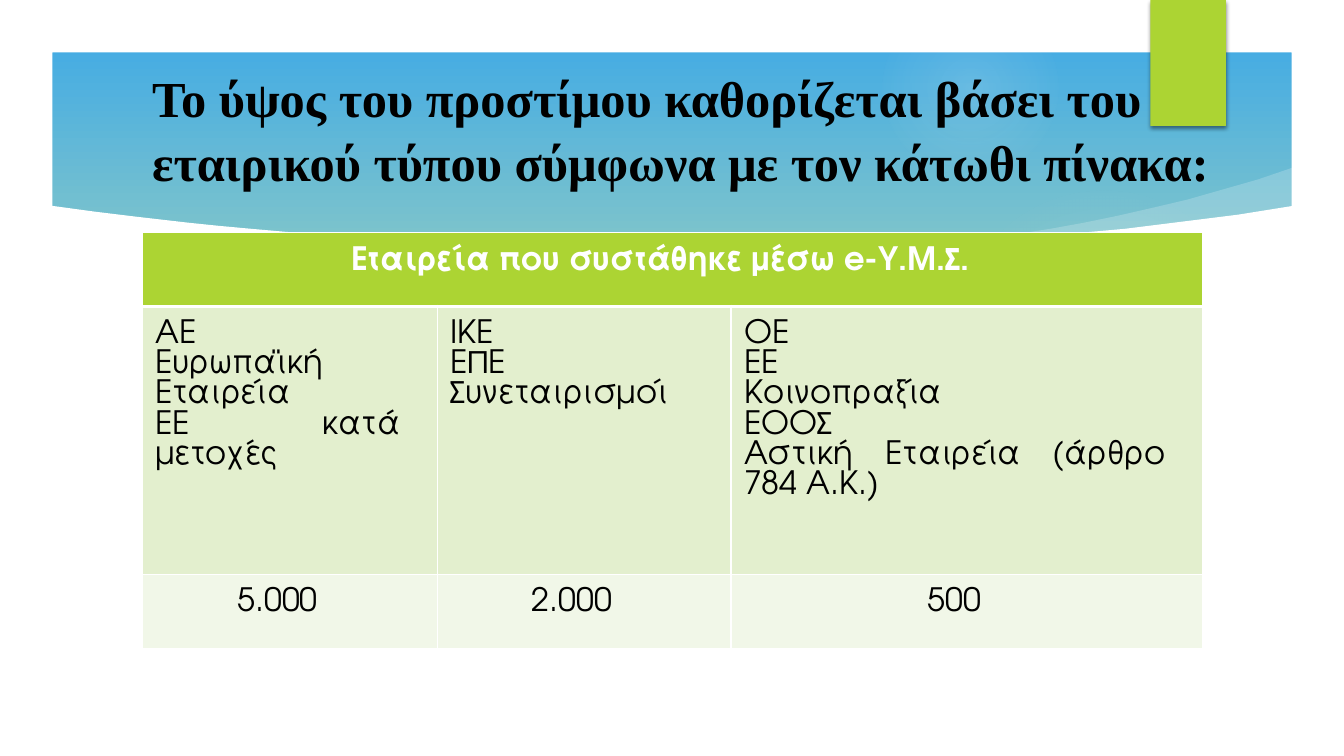
import pptx
import pptx.dml.color
import pptx.enum.shapes
import pptx.enum.text
import pptx.oxml
import pptx.oxml.ns
import pptx.util
from pptx.util import Inches

SLIDE_SIZE = (13.33, 7.5)
TITLE = "Το ύψος του προστίμου καθορίζεται βάσει του εταιρικού τύπου σύμφωνα με τον κάτωθι πίνακα:"
HEADER = "Εταιρεία που συστάθηκε μέσω e-Υ.Μ.Σ."
FINES = [
    (["ΑΕ", "Ευρωπαϊκή Εταιρεία", "ΕΕ κατά μετοχές"], "5.000"),
    (["ΙΚΕ", "ΕΠΕ", "Συνεταιρισμοί"], "2.000"),
    (["ΟΕ", "ΕΕ", "Κοινοπραξία", "ΕΟΟΣ", "Αστική Εταιρεία (άρθρο 784 Α.Κ.)"], "500"),
]
COLUMN_WIDTHS = [2.93, 2.91, 4.68]
ROW_HEIGHTS = [0.73, 2.66, 0.73]
ROW_FILLS = ["ACD433", "E3EFCE", "F1F7E8"]
WHITE, BLACK, GREEN = "FFFFFF", "000000", "ACD433"

# Gradient stops: position %, colour, opacity %
SKY = [(0, "38A6E9", 100), (74, "DAECA3", 100), (83, "DAECA3", 100), (100, "E6F2C2", 100)]
# Glows: left, top, diameter, then (position %, opacity %) of each stop
GLOWS = [
    (0, 2.92, 4.58, [(0, 11), (36, 10), (75, 0)]),
    (0, 3.17, 2.58, [(0, 8), (36, 8), (72, 0)]),
    (9.41, 1.83, 3.08, [(0, 7), (36, 6), (69, 0)]),
    (8.75, 0, 1.75, [(0, 14), (36, 7), (73, 0)]),
    (9.41, 6.42, 1.08, [(0, 14), (36, 7), (66, 0)]),
]
STREAK = [(9.34, 2.5), (10.3, 2.46), (11.6, 2.32), (12.89, 2.14), (12.83, 1.66),
          (12.48, 1.78), (12.13, 1.88), (11.78, 1.98), (11.44, 2.06), (11.09, 2.14),
          (10.75, 2.21), (10.42, 2.27), (10.1, 2.32), (9.79, 2.37), (9.3, 2.43)]
PANEL = [(0.5, 2.04), (0.5, 7), (12.84, 7), (12.84, 2.04), (12.28, 2.13), (11.72, 2.2),
         (11.16, 2.27), (10.6, 2.32), (10.04, 2.37), (9.49, 2.41), (8.94, 2.44),
         (8.4, 2.46), (7.86, 2.47), (7.34, 2.48), (6.82, 2.48), (6.32, 2.47),
         (5.83, 2.46), (5.35, 2.45), (4.88, 2.43), (4.44, 2.41), (4.01, 2.38),
         (3.6, 2.36), (3.21, 2.33), (2.83, 2.3), (2.49, 2.27), (2.16, 2.24),
         (1.87, 2.21), (1.35, 2.15), (0.94, 2.1)]
FRAME_OUTER = [(0, 0), (0, 7.5), (13.33, 7.5), (13.33, 0)]
FRAME_INNER = [(12.81, 6.98), (0.52, 6.98), (0.52, 0.52), (12.81, 0.52)]


def rgb(value):
    return pptx.dml.color.RGBColor.from_string(value)


def xml(text):
    """Parse an element whose tags use the a: prefix."""
    end = text.index(">")
    end -= text[end - 1] == "/"
    return pptx.oxml.parse_xml(text[:end] + " " + pptx.oxml.ns.nsdecls("a") + text[end:])


def gradient(stops, direction):
    items = "".join(
        f'<a:gs pos="{position * 1000}"><a:srgbClr val="{color}">'
        f'<a:alpha val="{opacity * 1000}"/></a:srgbClr></a:gs>'
        for position, color, opacity in stops)
    return xml(f'<a:gradFill rotWithShape="1"><a:gsLst>{items}</a:gsLst>{direction}</a:gradFill>')


def replace_fill(fill, properties, new_fill):
    """Swap a solid fill for a gradient element."""
    fill.solid()
    old_fill = properties.find(pptx.oxml.ns.qn("a:solidFill"))
    properties.replace(old_fill, new_fill)


def finish(shape, color):
    shape.shadow.inherit = False
    shape.line.fill.background()
    shape.fill.solid()
    shape.fill.fore_color.rgb = rgb(color)


def add_outline(slide, color, *contours):
    points = [[(Inches(x), Inches(y)) for x, y in contour] for contour in contours]
    builder = slide.shapes.build_freeform(*points[0][0])
    builder.add_line_segments(points[0][1:], close=True)
    for contour in points[1:]:
        builder.move_to(*contour[0])
        builder.add_line_segments(contour[1:], close=True)
    shape = builder.convert_to_shape()
    finish(shape, color)
    return shape


def add_run(paragraph, text, font_name, size, color, bold):
    run = paragraph.add_run()
    run.text = text
    run.font.name = font_name
    run.font.size = pptx.util.Pt(size)
    run.font.bold = bold
    run.font.color.rgb = rgb(color)


def add_background(slide):
    fill = slide.background.fill
    fill.solid()
    properties = slide.background._cSld.bg.bgPr
    replace_fill(fill, properties, gradient(SKY, '<a:lin ang="5400000" scaled="0"/>'))
    center = ('<a:path path="circle"><a:fillToRect l="50000" t="50000" '
              'r="50000" b="50000"/></a:path>')
    for left, top, diameter, stops in GLOWS:
        glow = slide.shapes.add_shape(
            pptx.enum.shapes.MSO_SHAPE.OVAL, *map(Inches, (left, top, diameter, diameter)))
        finish(glow, "F7F7F7")
        stops = [(position, "F7F7F7", opacity) for position, opacity in stops]
        replace_fill(glow.fill, glow._element.spPr, gradient(stops, center))
    streak = add_outline(slide, WHITE, STREAK)
    streak_color = streak._element.spPr.find(".//" + pptx.oxml.ns.qn("a:srgbClr"))
    streak_color.append(xml('<a:alpha val="20000"/>'))
    add_outline(slide, WHITE, PANEL)
    add_outline(slide, WHITE, FRAME_OUTER, FRAME_INNER)


def add_tab(slide):
    tab = slide.shapes.add_shape(
        pptx.enum.shapes.MSO_SHAPE.RECTANGLE, *map(Inches, (11.41, 0, 0.75, 1.25)))
    finish(tab, GREEN)
    effects = tab._element.spPr.find(pptx.oxml.ns.qn("a:effectLst"))
    effects.append(xml(
        '<a:outerShdw blurRad="38100" dist="25400" dir="5400000" rotWithShape="0">'
        '<a:srgbClr val="000000"><a:alpha val="45000"/></a:srgbClr></a:outerShdw>'))


def add_title(slide):
    box = slide.shapes.add_textbox(*map(Inches, (1.41, 0.67, 11.15, 1.2)))
    frame = box.text_frame
    frame.word_wrap = True
    frame.vertical_anchor = pptx.enum.text.MSO_ANCHOR.MIDDLE
    paragraph = frame.paragraphs[0]
    paragraph.line_spacing = 1.05
    add_run(paragraph, TITLE, "Times New Roman", 36, BLACK, True)


def fill_cell(cell, lines, row):
    cell.margin_left = cell.margin_right = Inches(0.13)
    cell.margin_top = cell.margin_bottom = Inches(0.13)
    alignment = pptx.enum.text.PP_ALIGN
    for index, line in enumerate(lines):
        frame = cell.text_frame
        paragraph = frame.add_paragraph() if index else frame.paragraphs[0]
        paragraph.alignment = alignment.JUSTIFY if row == 1 else alignment.CENTER
        paragraph.line_spacing = pptx.util.Pt(21.6)
        paragraph._p.get_or_add_pPr().set("marR", str(Inches(0.24)))
        add_run(paragraph, line, "TeX Gyre Adventor", 23, BLACK if row else WHITE, row == 0)
    properties = cell._tc.get_or_add_tcPr()
    for side in "LRTB":
        heavy = (row, side) in [(0, "B"), (1, "T")]
        width = pptx.util.Pt(3 if heavy else 1)
        properties.append(xml(f'<a:ln{side} w="{width}"><a:solidFill>'
                              f'<a:srgbClr val="{WHITE}"/></a:solidFill></a:ln{side}>'))
    cell.fill.solid()
    cell.fill.fore_color.rgb = rgb(ROW_FILLS[row])


def add_fines_table(slide):
    rows = [[[HEADER], [], []],
            [companies for companies, fine in FINES],
            [[fine] for companies, fine in FINES]]
    table = slide.shapes.add_table(
        len(rows), len(FINES), Inches(1.41), Inches(2.31),
        Inches(sum(COLUMN_WIDTHS)), Inches(sum(ROW_HEIGHTS))).table
    for column, width in zip(table.columns, COLUMN_WIDTHS):
        column.width = Inches(width)
    for row, height in zip(table.rows, ROW_HEIGHTS):
        row.height = Inches(height)
    table.cell(0, 0).merge(table.cell(0, 2))
    for row, cells in enumerate(rows):
        for column, lines in enumerate(cells):
            fill_cell(table.cell(row, column), lines, row)


def main():
    presentation = pptx.Presentation()
    presentation.slide_width, presentation.slide_height = map(Inches, SLIDE_SIZE)
    slide = presentation.slides.add_slide(presentation.slide_layouts[6])
    add_background(slide)
    add_tab(slide)
    add_title(slide)
    add_fines_table(slide)
    presentation.save("out.pptx")


if __name__ == "__main__":
    main()
